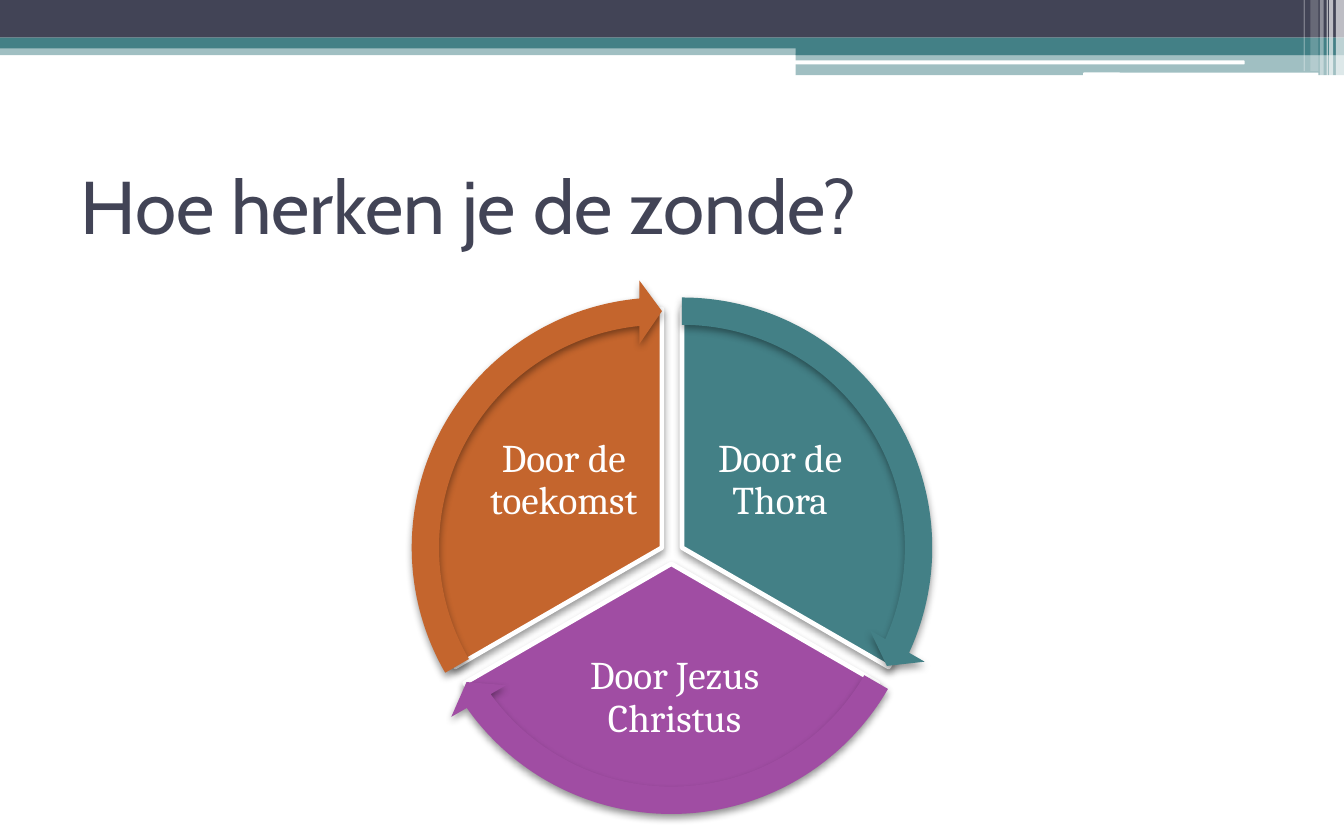
from lxml import etree
from pptx import Presentation
from pptx.dml.color import RGBColor
from pptx.enum.shapes import MSO_SHAPE
from pptx.enum.text import MSO_ANCHOR, PP_ALIGN
from pptx.oxml.ns import qn
from pptx.util import Inches, Pt

RECTANGLE, ROUNDED = MSO_SHAPE.RECTANGLE, MSO_SHAPE.ROUNDED_RECTANGLE
PIE, CIRCULAR_ARROW = MSO_SHAPE.PIE, MSO_SHAPE.CIRCULAR_ARROW
MIDDLE, LEFT, CENTER = MSO_ANCHOR.MIDDLE, PP_ALIGN.LEFT, PP_ALIGN.CENTER

NAVY = RGBColor(0x42, 0x44, 0x56)
TEAL = RGBColor(0x43, 0x80, 0x86)
PURPLE = RGBColor(0xA0, 0x4D, 0xA3)
ORANGE = RGBColor(0xC4, 0x65, 0x2D)
WHITE = RGBColor(0xFF, 0xFF, 0xFF)

deck = Presentation()
deck.slide_width, deck.slide_height = Inches(10), Inches(6.25)
page = deck.slides.add_slide(deck.slide_layouts[5])


def add_filled(kind, left, top, width, height, color, opacity=100):
    shape = page.shapes.add_shape(
        kind, Inches(left), Inches(top), Inches(width), Inches(height))
    shape.shadow.inherit = False
    shape.fill.solid()
    shape.fill.fore_color.rgb = color
    shape.line.fill.background()
    if opacity < 100:
        tint = shape.element.spPr.find(".//" + qn("a:srgbClr"))
        etree.SubElement(tint, qn("a:alpha"), val=str(opacity * 1000))
    return shape


def add_soft_shadow(shape):
    effects = shape.element.spPr.find(qn("a:effectLst"))
    shadow = etree.SubElement(
        effects, qn("a:outerShdw"), blurRad=str(Pt(4.1)), dist=str(Pt(2)),
        dir="5400000", rotWithShape="0")
    tint = etree.SubElement(shadow, qn("a:srgbClr"), val="000000")
    etree.SubElement(tint, qn("a:alpha"), val="40000")


bands = [
    (RECTANGLE, 0, 0.33, 10, 0.08, TEAL, 50),
    (RECTANGLE, 0, 0, 10, 0.28, NAVY, 100),
    (RECTANGLE, 0, 0.28, 10, 0.08, TEAL, 100),
    (RECTANGLE, 5.92, 0.33, 4.08, 0.08, TEAL, 100),
    (RECTANGLE, 5.92, 0.4, 4.08, 0.16, TEAL, 50),
    (ROUNDED, 5.91, 0.45, 3.35, 0.03, WHITE, 100),
    (ROUNDED, 8.06, 0.54, 1.75, 0.03, WHITE, 100),
]
for band in bands:
    add_filled(*band)

stripes = [
    (9.94, 0.06, 0.57, 65),
    (9.89, 0.03, 0.57, 65),
    (9.87, 0.01, 0.57, 60),
    (9.82, 0.03, 0.57, 40),
    (9.75, 0.06, 0.53, 20),
    (9.7, 0.01, 0.53, 30),
]
for left, width, height, opacity in stripes:
    add_filled(RECTANGLE, left, 0, width, height, WHITE, opacity)

PIE_SIZE, ARROW_SIZE = 3.55, 3.99
RING_OFFSET = (ARROW_SIZE - PIE_SIZE) / 2
sectors = [
    ("Door de Thora", TEAL, (3.3, 2.3), (162, 18),
     (5.17, 3.05, 1.27, 1.06), (14.725, 161.994)),
    ("Door Jezus Christus", PURPLE, (3.22, 2.42), (18, 90),
     (4.07, 4.73, 1.9, 0.93), (86.72, 18.005)),
    ("Door de toekomst", ORANGE, (3.15, 2.3), (90, 162),
     (3.56, 3.05, 1.27, 1.06), (158.73, 90)),
]
for label, color, (left, top), angles, label_area, sweep in sectors:
    sector = add_filled(PIE, left, top, PIE_SIZE, PIE_SIZE, color)
    sector.adjustments[0], sector.adjustments[1] = angles
    sector.line.color.rgb = WHITE
    sector.line.width = Pt(2.5)
    add_soft_shadow(sector)

    box = page.shapes.add_textbox(*[Inches(length) for length in label_area])
    frame = box.text_frame
    frame.word_wrap = True
    frame.vertical_anchor = MIDDLE
    frame.margin_left = frame.margin_right = Inches(0.03)
    frame.margin_top = frame.margin_bottom = Inches(0.03)
    frame.text = label
    para = frame.paragraphs[0]
    para.alignment = CENTER
    para.line_spacing = 0.9
    span = para.runs[0]
    span.font.name = "Cambria"
    span.font.size = Pt(21)
    span.font.color.rgb = WHITE

for label, color, (left, top), angles, label_area, sweep in sectors:
    arrow = add_filled(CIRCULAR_ARROW, left - RING_OFFSET, top - RING_OFFSET,
                       ARROW_SIZE, ARROW_SIZE, color)
    for index, value in enumerate((0.051, 3.275, *sweep, 0.059)):
        arrow.adjustments[index] = value
    add_soft_shadow(arrow)

title = page.shapes.title
title.left, title.top = Inches(0.5), Inches(1.04)
title.width, title.height = Inches(9), Inches(0.97)
title.text_frame.text = "Hoe herken je de zonde?"
title.text_frame.vertical_anchor = MIDDLE
para = title.text_frame.paragraphs[0]
para.alignment = LEFT
span = para.runs[0]
span.font.name = "Cabin"
span.font.size = Pt(40)
span.font.color.rgb = NAVY

deck.save("out.pptx")
